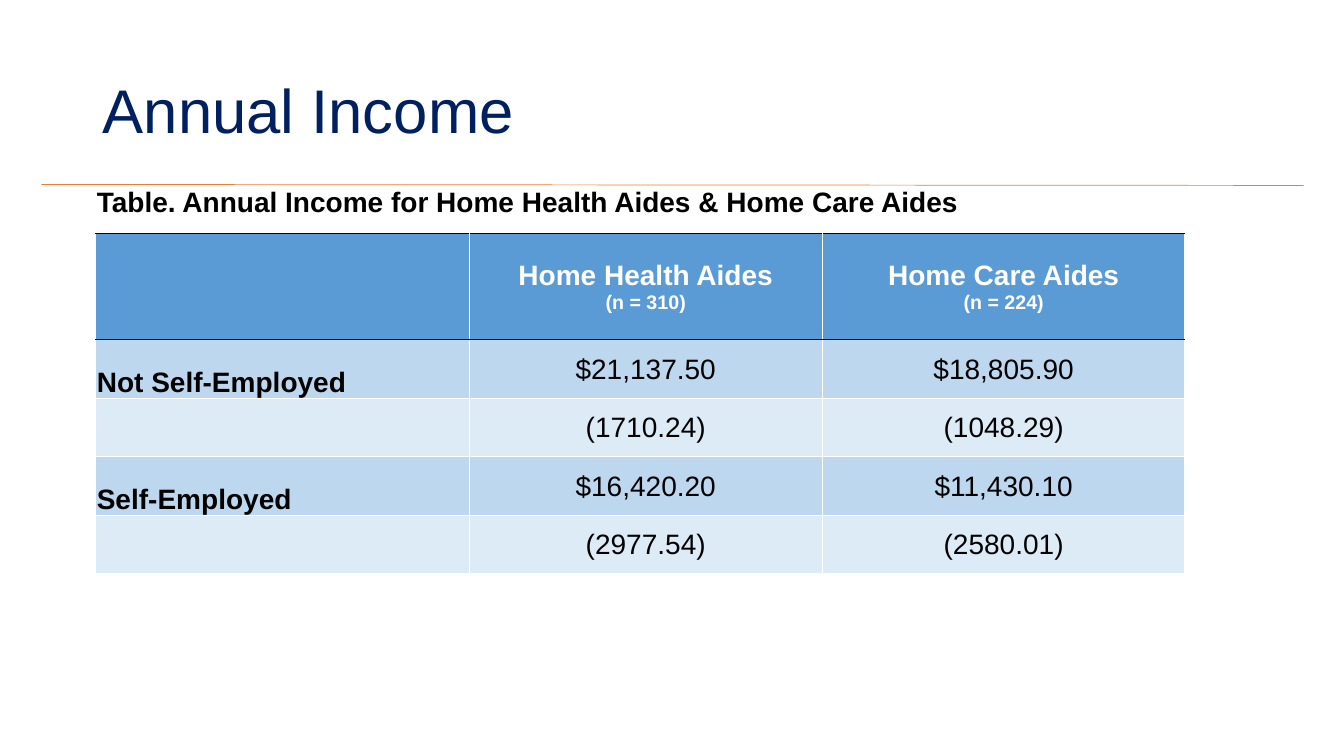
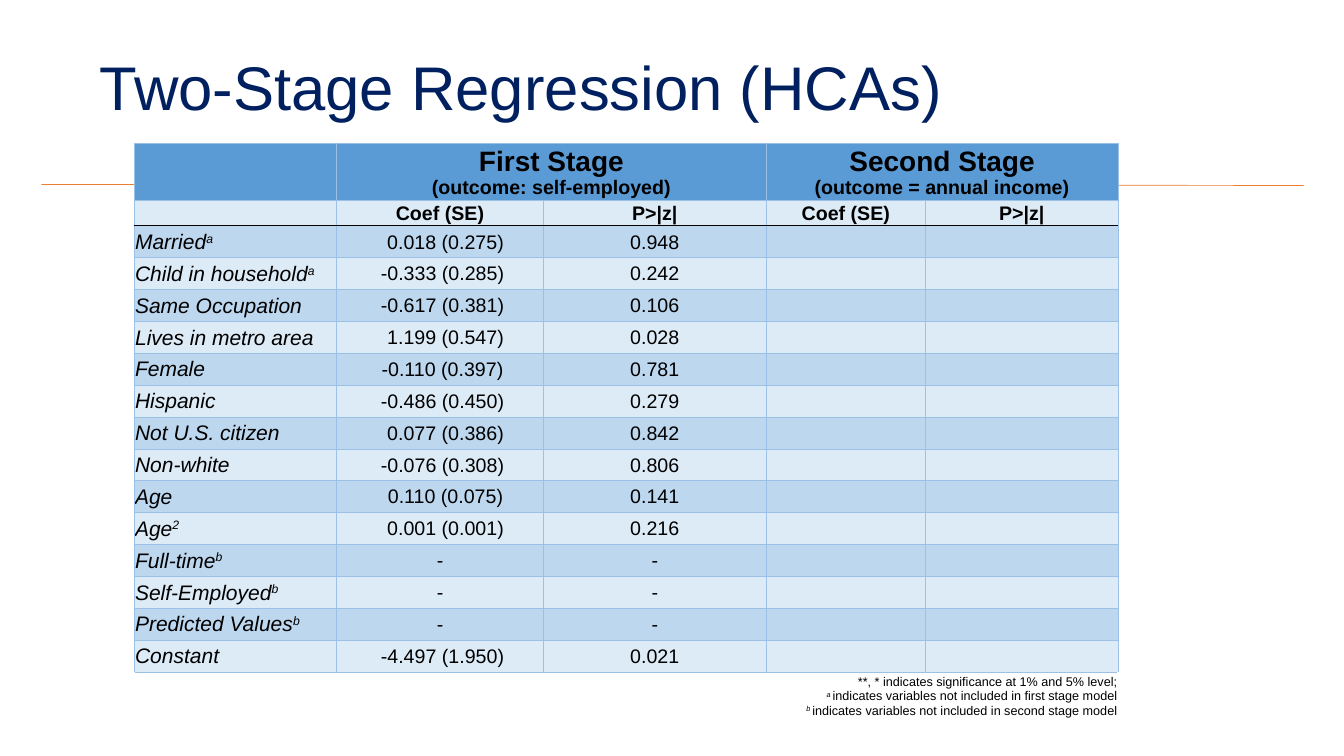
"""Build two slides of income and regression tables for home care workers."""
from lxml.etree import SubElement
from pptx import Presentation
from pptx.dml.color import RGBColor
from pptx.enum.shapes import MSO_CONNECTOR
from pptx.enum.text import MSO_ANCHOR, MSO_AUTO_SIZE, PP_ALIGN
from pptx.oxml.ns import qn
from pptx.util import Inches, Pt

FONT = "Arial"
NAVY = RGBColor(0x00, 0x20, 0x60)
ORANGE = RGBColor(0xED, 0x7D, 0x31)
BLACK = RGBColor(0x00, 0x00, 0x00)
WHITE = RGBColor(0xFF, 0xFF, 0xFF)
HEADER_BLUE = RGBColor(0x5B, 0x9B, 0xD5)
BORDER_BLUE = RGBColor(0x9B, 0xC2, 0xE6)
BANDS = RGBColor(0xBD, 0xD7, 0xEE), RGBColor(0xDD, 0xEB, 0xF7)

INCOME_CAPTION = "Table. Annual Income for Home Health Aides & Home Care Aides"
INCOME_GROUPS = [("Home Health Aides", "(n = 310)"), ("Home Care Aides", "(n = 224)")]
INCOME_ROWS = [
    ("Not Self-Employed", "$21,137.50", "$18,805.90"),
    ("", "(1710.24)", "(1048.29)"),
    ("Self-Employed", "$16,420.20", "$11,430.10"),
    ("", "(2977.54)", "(2580.01)"),
]

# "^" switches superscript on and off
STAGES = [("First Stage", "(outcome: self-employed)"), ("Second Stage", "(outcome = annual income)")]
MEASURES = ["", "Coef (SE)", "P>|z|", "Coef (SE)", "P>|z|"]
REGRESSION_ROWS = [
    ("Married^a", "0.018 (0.275)", "0.948"),
    ("Child in household^a", "-0.333 (0.285)", "0.242"),
    ("Same Occupation", "-0.617 (0.381)", "0.106"),
    ("Lives in metro area", "1.199 (0.547)", "0.028"),
    ("Female", "-0.110 (0.397)", "0.781"),
    ("Hispanic", "-0.486 (0.450)", "0.279"),
    ("Not U.S. citizen", "0.077 (0.386)", "0.842"),
    ("Non-white", "-0.076 (0.308)", "0.806"),
    ("Age", "0.110 (0.075)", "0.141"),
    ("Age^2", "0.001 (0.001)", "0.216"),
    ("Full-time^b", "-", "-"),
    ("Self-Employed^b", "-", "-"),
    ("Predicted Values^b", "-", "-"),
    ("Constant", "-4.497 (1.950)", "0.021"),
]
NOTES = [
    "**, * indicates significance at 1% and 5% level;",
    "^a ^indicates variables not included in first stage model",
    "^b ^indicates variables not included in second stage model",
]


def add_rule(presentation, layout):
    """Draw the rule once and move it to the shared layout."""
    slide = presentation.slides[0]
    rule = slide.shapes.add_connector(
        MSO_CONNECTOR.STRAIGHT, Inches(0.41), Inches(1.83), Inches(12.93), Inches(1.84))
    rule.line.color.rgb = ORANGE
    rule.line.width = Pt(0.5)
    SubElement(rule.element.spPr, qn("a:effectLst"))
    layout.shapes.element.append(rule.element)


def add_titled_slide(presentation, layout, title, left, top):
    """Add a slide with the shared title style."""
    slide = presentation.slides.add_slide(layout)
    shape = slide.shapes.title
    shape.left, shape.top, shape.width, shape.height = map(Inches, (left, top, 11.5, 1.45))
    text_frame = shape.text_frame
    text_frame.text = title
    text_frame.auto_size = MSO_AUTO_SIZE.NONE
    text_frame.vertical_anchor = MSO_ANCHOR.MIDDLE
    paragraph = text_frame.paragraphs[0]
    paragraph.alignment = PP_ALIGN.LEFT
    paragraph.line_spacing = 0.9
    font = paragraph.runs[0].font
    font.name, font.size, font.color.rgb = FONT, Pt(44), NAVY
    return slide


def add_grid(slide, left, top, columns, rows):
    """Add an unbanded table with the given column widths and row heights."""
    frame = slide.shapes.add_table(
        len(rows), len(columns), Inches(left), Inches(top), Inches(sum(columns)), Inches(sum(rows)))
    table = frame.table
    table.first_row = table.horz_banding = False
    for column, width in zip(table.columns, columns):
        column.width = Inches(width)
    for row, height in zip(table.rows, rows):
        row.height = Inches(height)
    return table


def style_cell(cell, fill, **borders):
    """Set borders, given as side=(colour, points), then fill and margins."""
    properties = cell._tc.get_or_add_tcPr()
    for side in "LRTB":
        if side in borders:
            color, points = borders[side]
            line = SubElement(properties, qn(f"a:ln{side}"), w=str(Pt(points)))
            solid = SubElement(line, qn("a:solidFill"))
            SubElement(solid, qn("a:srgbClr"), val=str(color))
    if fill is None:
        cell.fill.background()
    else:
        cell.fill.solid()
        cell.fill.fore_color.rgb = fill
    cell.margin_left = cell.margin_right = cell.margin_top = Inches(0.01)
    cell.margin_bottom = 0


def write_cell(cell, lines, sizes, align=PP_ALIGN.CENTER, anchor=MSO_ANCHOR.MIDDLE,
               color=BLACK, bold=False, italic=False):
    """Write one paragraph a line, each in its own size."""
    cell.vertical_anchor = anchor
    cell.text_frame.text = "\n".join(line.replace("^", "") for line in lines)
    for paragraph, line, size in zip(cell.text_frame.paragraphs, lines, sizes):
        paragraph.alignment = align
        if not line:
            SubElement(paragraph._p, qn("a:endParaRPr"), sz=str(size * 100))
            continue
        if "^" in line:
            paragraph.clear()
            for part in line.split("^"):
                paragraph.add_run().text = part
        for index, run in enumerate(paragraph.runs):
            raised = index % 2 == 1
            font = run.font
            font.name, font.size, font.color.rgb = FONT, Pt(size), color
            font.bold, font.italic = bold, italic or raised
            if raised:
                run._r.get_or_add_rPr().set("baseline", "30000")


def build_income_table(slide):
    """Add the table of annual income."""
    table = add_grid(slide, 0.95, 1.85, [3.7, 3.51, 3.59], [0.46, 1.06] + [0.58] * 4)
    white, black = (WHITE, 0.5), (BLACK, 0.5)
    fills = [None, HEADER_BLUE, *BANDS, *BANDS]
    for row, fill in enumerate(fills):
        for column in range(3):
            style_cell(table.cell(row, column), fill, L=white, R=white,
                       T=black if row in (1, 2) else white,
                       B=black if row in (0, 1) else white)
    table.cell(0, 0).merge(table.cell(0, 2))
    write_cell(table.cell(0, 0), [INCOME_CAPTION], [20], PP_ALIGN.LEFT, MSO_ANCHOR.TOP, bold=True)
    for column, lines in enumerate(INCOME_GROUPS, 1):
        write_cell(table.cell(1, column), lines, [20, 14], color=WHITE, bold=True)
    for row, (label, *amounts) in enumerate(INCOME_ROWS, 2):
        write_cell(table.cell(row, 0), [label], [20], PP_ALIGN.LEFT, MSO_ANCHOR.BOTTOM, bold=True)
        for column, amount in enumerate(amounts, 1):
            write_cell(table.cell(row, column), [amount], [20])


def build_regression_table(slide):
    """Add the table of regression results."""
    count = len(REGRESSION_ROWS)
    table = add_grid(slide, 1.33, 1.42, [2.01, 2.05, 2.21, 1.58, 1.91],
                     [0.57, 0.25] + [4.43 / count] * count + [0.48])
    blue, black = (BORDER_BLUE, 0.5), (BLACK, 1)
    fills = [HEADER_BLUE, BANDS[1]] + [BANDS[index % 2] for index in range(count)]
    for row, fill in enumerate(fills):
        for column in range(5):
            style_cell(table.cell(row, column), fill, L=blue, R=blue,
                       T=black if row == 2 else blue, B=black if row == 1 else blue)
    for column, lines in zip((1, 3), STAGES):
        table.cell(0, column).merge(table.cell(0, column + 1))
        write_cell(table.cell(0, column), lines, [20, 14], bold=True)
    for column, measure in enumerate(MEASURES):
        write_cell(table.cell(1, column), [measure], [14], bold=True)
    for row, (label, *values) in enumerate(REGRESSION_ROWS, 2):
        write_cell(table.cell(row, 0), [label], [15], PP_ALIGN.LEFT, italic=True)
        for column, value in enumerate(values + ["", ""], 1):
            write_cell(table.cell(row, column), [value], [14])
        if values[0] != "-":
            indent = 0.06 if values[0].startswith("-") else 0.12
            table.cell(row, 1).margin_left = Inches(indent)
    last = count + 2
    for column in range(5):
        style_cell(table.cell(last, column), None, T=blue)
    table.cell(last, 0).merge(table.cell(last, 4))
    write_cell(table.cell(last, 0), NOTES, [9] * len(NOTES), PP_ALIGN.RIGHT)


def main():
    """Build and save the presentation."""
    presentation = Presentation()
    presentation.slide_width, presentation.slide_height = Inches(13.33), Inches(7.5)
    layout = presentation.slide_layouts[5]
    build_income_table(add_titled_slide(presentation, layout, "Annual Income", 0.92, 0.4))
    build_regression_table(
        add_titled_slide(presentation, layout, "Two-Stage Regression (HCAs)", 0.89, 0.17))
    add_rule(presentation, layout)
    presentation.save("out.pptx")


if __name__ == "__main__":
    main()
